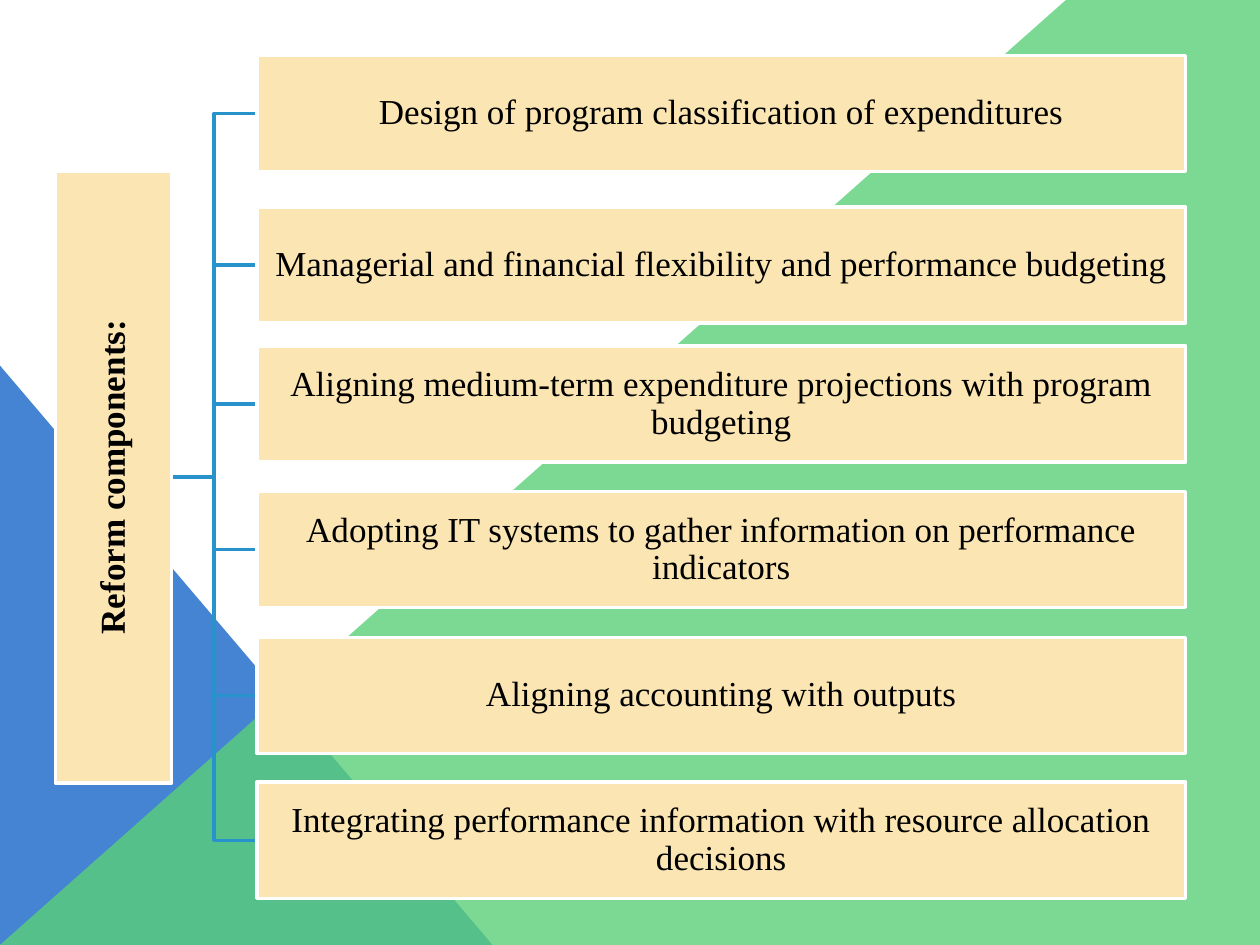
import pptx
import pptx.dml.color
import pptx.enum.shapes
import pptx.enum.text
import pptx.oxml
import pptx.oxml.ns
import pptx.util
from pptx.util import Cm

WHITE = pptx.dml.color.RGBColor(0xFF, 0xFF, 0xFF)
BLACK = pptx.dml.color.RGBColor(0x00, 0x00, 0x00)
CREAM = pptx.dml.color.RGBColor(0xFB, 0xE6, 0xB3)
BLUE = pptx.dml.color.RGBColor(0x45, 0x84, 0xD3)
GREEN = pptx.dml.color.RGBColor(0x5B, 0xD0, 0x78)
LINK_BLUE = pptx.dml.color.RGBColor(0x27, 0x92, 0xCB)

SLIDE_WIDTH, SLIDE_HEIGHT = Cm(25.4), Cm(19.05)
RIGHT_SIDE, LEFT_SIDE = 3, 1

# Top edge in centimetres and wording of each component
COMPONENTS = [
    (1.12, "Design of program classification of expenditures"),
    (4.17, "Managerial and financial flexibility and performance budgeting"),
    (6.98, "Aligning medium-term expenditure projections with program budgeting"),
    (9.91, "Adopting IT systems to gather information on performance indicators"),
    (12.85, "Aligning accounting with outputs"),
    (15.77, "Integrating performance information with resource allocation decisions"),
]


def fill_plain(shape, color):
    shape.shadow.inherit = False
    shape.fill.solid()
    shape.fill.fore_color.rgb = color
    shape.line.fill.background()


def add_background(slide):
    triangle = slide.shapes.add_shape(
        pptx.enum.shapes.MSO_SHAPE.RIGHT_TRIANGLE, 0, Cm(7.37), Cm(9.93), Cm(11.68))
    fill_plain(triangle, BLUE)

    builder = slide.shapes.build_freeform(0, SLIDE_HEIGHT)
    builder.add_line_segments(
        [(Cm(21.49), 0), (SLIDE_WIDTH, 0), (SLIDE_WIDTH, SLIDE_HEIGHT)], close=True)
    wedge = builder.convert_to_shape()
    fill_plain(wedge, GREEN)
    color = wedge.fill._xPr.find(".//" + pptx.oxml.ns.qn("a:srgbClr"))
    color.append(pptx.oxml.parse_xml(
        f'<a:alpha {pptx.oxml.ns.nsdecls("a")} val="80000"/>'))


def add_link(slide):
    """Add an elbow line, to be joined once the boxes in front of it exist."""
    link = slide.shapes.add_connector(
        pptx.enum.shapes.MSO_CONNECTOR.ELBOW, 0, 0, 0, 0)
    link.line.color.rgb = LINK_BLUE
    link.line.width = pptx.util.Pt(2)
    link._element.spPr.append(pptx.oxml.parse_xml(
        f'<a:effectLst {pptx.oxml.ns.nsdecls("a")}/>'))
    return link


def add_box(slide, left, top, width, height, text, bold=False):
    box = slide.shapes.add_shape(
        pptx.enum.shapes.MSO_SHAPE.RECTANGLE, left, top, width, height)
    fill_plain(box, CREAM)
    box.line.color.rgb = WHITE
    box.line.width = pptx.util.Pt(2)

    frame = box.text_frame
    frame.text = text
    frame.word_wrap = True
    frame.vertical_anchor = pptx.enum.text.MSO_ANCHOR.MIDDLE
    frame.margin_left = frame.margin_right = Cm(0.03)
    frame.margin_top = frame.margin_bottom = Cm(0.03)
    para = frame.paragraphs[0]
    para.alignment = pptx.enum.text.PP_ALIGN.CENTER
    para.line_spacing = 0.9
    font = para.runs[0].font
    font.name = "Times New Roman"
    font.size = pptx.util.Pt(20)
    font.bold = bold
    font.color.rgb = BLACK
    return box


def main():
    deck = pptx.Presentation()
    deck.slide_width, deck.slide_height = SLIDE_WIDTH, SLIDE_HEIGHT
    slide = deck.slides.add_slide(deck.slide_layouts[6])

    add_background(slide)
    links = [add_link(slide) for _ in COMPONENTS]
    heading = add_box(slide, Cm(1.12), Cm(3.45), Cm(2.34), Cm(12.34),
                      "Reform components:", bold=True)
    heading.text_frame._txBody.bodyPr.set("vert", "vert270")

    for link, (top, text) in zip(links, COMPONENTS):
        box = add_box(slide, Cm(5.18), Cm(top), Cm(18.72), Cm(2.34), text)
        link.begin_connect(heading, RIGHT_SIDE)
        link.end_connect(box, LEFT_SIDE)

    deck.save("out.pptx")


if __name__ == "__main__":
    main()
